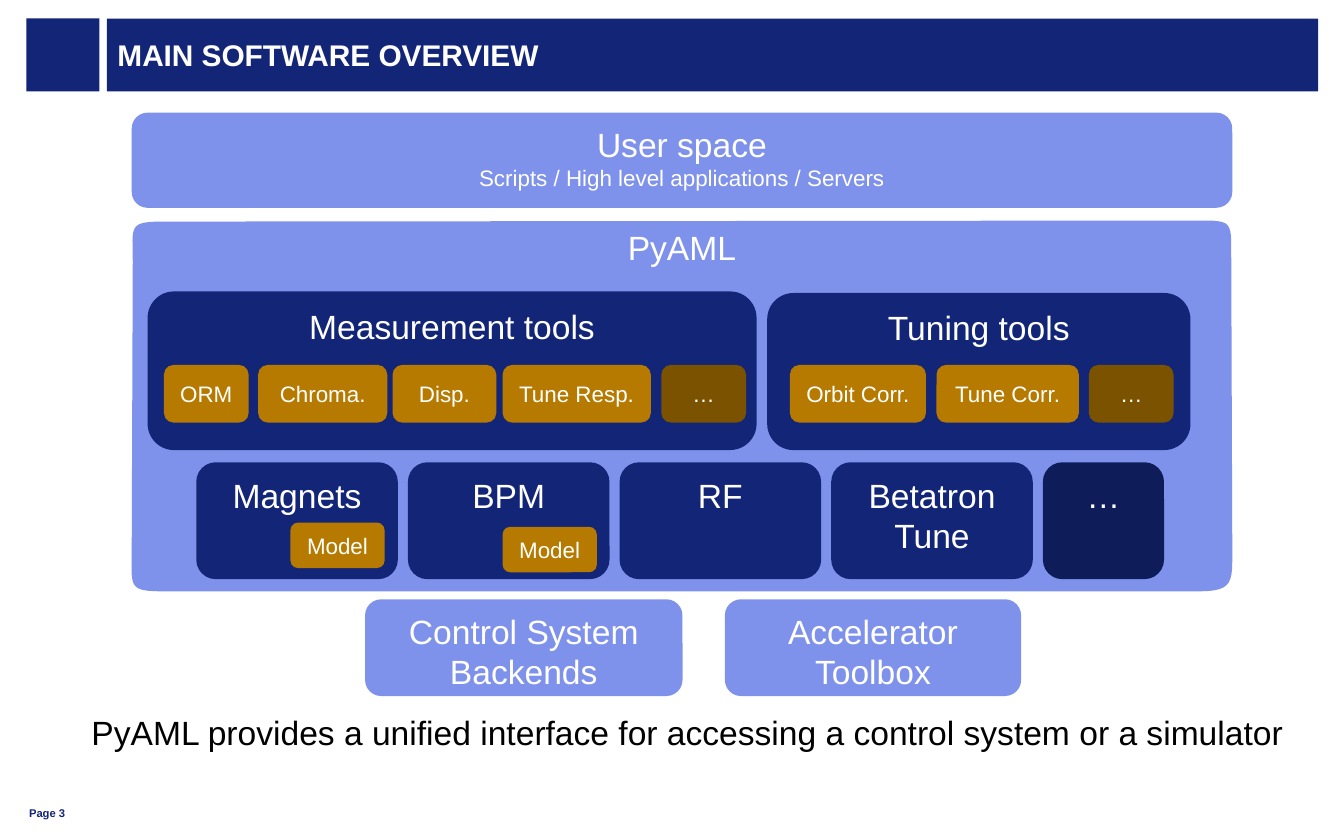
from dataclasses import dataclass

from pptx import Presentation
from pptx.dml.color import RGBColor
from pptx.enum.shapes import MSO_SHAPE as Shape
from pptx.enum.text import MSO_ANCHOR as Anchor, MSO_AUTO_SIZE as AutoSize, PP_ALIGN as Align
from pptx.util import Cm, Pt


@dataclass(frozen=True)
class Theme:
    """Colours, type sizes and font of the slide."""
    navy: str = "132577"
    deep_navy: str = "0E1C59"
    sky: str = "7F92EB"
    amber: str = "B77A00"
    brown: str = "7A5200"
    white: str = "FFFFFF"
    black: str = "000000"
    heading: int = 16
    label: int = 18
    detail: int = 12
    footer: int = 6
    font: str = "Arial"


THEME = Theme()


def paint(shape, color):
    """Give a shape a flat fill without line or shadow."""
    shape.fill.solid()
    shape.fill.fore_color.rgb = RGBColor.from_string(color)
    shape.line.fill.background()
    shape.shadow.inherit = False


def write(shape, text, sizes, color=THEME.white, bold=False, align=Align.CENTER,
          anchor=Anchor.TOP, wrap=True):
    """Set the text of a shape, with one size for each paragraph in turn."""
    frame = shape.text_frame
    frame.text = text
    frame.auto_size = AutoSize.NONE
    frame.word_wrap = wrap
    frame.vertical_anchor = anchor
    for index, para in enumerate(frame.paragraphs):
        para.alignment = align
        for span in para.runs:
            span.font.name = THEME.font
            span.font.size = Pt(sizes[min(index, len(sizes) - 1)])
            span.font.bold = bold
            span.font.color.rgb = RGBColor.from_string(color)


def set_margins(shape, side):
    """Set the side margins and clear the top and bottom ones."""
    frame = shape.text_frame
    frame.margin_left = frame.margin_right = Cm(side)
    frame.margin_top = frame.margin_bottom = 0


def add_block(page, text, left, top, width, height, color, sizes=(THEME.label,)):
    """Add a rounded block with its label at the top."""
    box = page.shapes.add_shape(Shape.ROUNDED_RECTANGLE, Cm(left), Cm(top), Cm(width), Cm(height))
    paint(box, color)
    write(box, text, sizes)
    return box


def add_chip(page, text, left, top, width, height=1.09):
    """Add a small block with a centred label on one line."""
    color = THEME.brown if text == "…" else THEME.amber
    chip = add_block(page, text, left, top, width, height, color, (THEME.detail,))
    chip.text_frame.vertical_anchor = Anchor.MIDDLE
    chip.text_frame.word_wrap = False


def add_caption(page, text, left, top, width, height, size, **style):
    """Add a text box on one line."""
    box = page.shapes.add_textbox(Cm(left), Cm(top), Cm(width), Cm(height))
    write(box, text, (size,), align=Align.LEFT, wrap=False, **style)
    return box


def curve(points, steps=12):
    """Sample a cubic curve given by four points."""
    weights = (1, 3, 3, 1)
    for step in range(steps + 1):
        t = step / steps
        factors = [w * (1 - t) ** (3 - i) * t ** i for i, w in enumerate(weights)]
        yield tuple(Cm(sum(f * point[axis] for f, point in zip(factors, points)))
                    for axis in (0, 1))


def add_library_panel(page):
    """Add the hand-shaped panel that holds the library parts."""
    corners = [
        ((2.51, 4.95), (2.51, 4.29), (2.41, 4.19), (3.07, 4.19)),
        ((22.66, 4.17), (23.29, 4.17), (23.27, 4.19), (23.27, 4.83)),
        ((23.29, 10.36), (23.29, 11), (23.32, 11.18), (22.66, 11.18)),
        ((3.05, 11.18), (2.41, 11.18), (2.49, 11.07), (2.49, 10.41)),
    ]
    outline = [point for corner in corners for point in curve(corner)]
    builder = page.shapes.build_freeform(*outline[0])
    builder.add_line_segments(outline[1:], close=True)
    panel = builder.convert_to_shape()
    paint(panel, THEME.sky)
    write(panel, "PyAML", (THEME.label,))


def add_header(page, text):
    """Add the square and the title bar."""
    square = page.shapes.add_shape(Shape.RECTANGLE, Cm(0.5), Cm(0.35), Cm(1.38), Cm(1.38))
    paint(square, THEME.navy)
    title = page.shapes.title
    title.left, title.top, title.width, title.height = Cm(2.02), Cm(0.35), Cm(22.89), Cm(1.38)
    title.fill.solid()
    title.fill.fore_color.rgb = RGBColor.from_string(THEME.navy)
    write(title, text, (THEME.heading,), bold=True, align=Align.LEFT, anchor=Anchor.MIDDLE)
    set_margins(title, 0.2)


def add_devices(page):
    """Add the evenly spaced row of devices and their models."""
    for index, name in enumerate(("Magnets", "BPM", "RF", "Betatron\nTune", "…")):
        width, color = (2.29, THEME.deep_navy) if name == "…" else (3.81, THEME.navy)
        add_block(page, name, 3.71 + 4 * index, 8.74, width, 2.21, color)
    for left, top in ((5.49, 9.88), (9.5, 9.96)):
        add_chip(page, "Model", left, top, 1.78, 0.86)


def add_tools(page):
    """Add the two tool groups with their chips."""
    add_block(page, "Measurement tools", 2.79, 5.51, 11.51, 3, THEME.navy)
    add_block(page, "Tuning tools", 14.5, 5.54, 8, 2.97, THEME.navy)
    chips = [
        ("ORM", 3.1, 1.6), ("Chroma.", 4.88, 2.44), ("Disp.", 7.42, 1.96),
        ("Tune Resp.", 9.5, 2.8), ("…", 12.5, 1.6),
        ("Orbit Corr.", 14.93, 2.57), ("Tune Corr.", 17.7, 2.69), ("…", 20.58, 1.6),
    ]
    for name, left, width in chips:
        add_chip(page, name, left, 6.9, width)


def main():
    """Build the slide and save the deck."""
    deck = Presentation()
    deck.slide_width, deck.slide_height = Cm(25.4), Cm(15.88)
    page = deck.slides.add_slide(deck.slide_layouts[5])
    add_header(page, "MAIN SOFTWARE OVERVIEW")
    add_block(page, "User space\nScripts / High level applications / Servers",
              2.49, 2.13, 20.8, 1.8, THEME.sky, (THEME.label, THEME.detail))
    add_library_panel(page)
    add_tools(page)
    add_devices(page)
    add_block(page, "Control System Backends", 6.9, 11.33, 6, 1.83, THEME.sky)
    add_block(page, "Accelerator\nToolbox", 13.7, 11.33, 5.6, 1.83, THEME.sky)
    add_caption(page, "PyAML provides a unified interface for accessing a control system or a simulator",
                1.48, 13.34, 23.22, 1.02, THEME.label, color=THEME.black)
    number = add_caption(page, "Page 3", 0.55, 15.01, 1.14, 0.48, THEME.footer,
                         color=THEME.navy, bold=True, anchor=Anchor.BOTTOM)
    set_margins(number, 0)
    deck.save("out.pptx")


if __name__ == "__main__":
    main()
